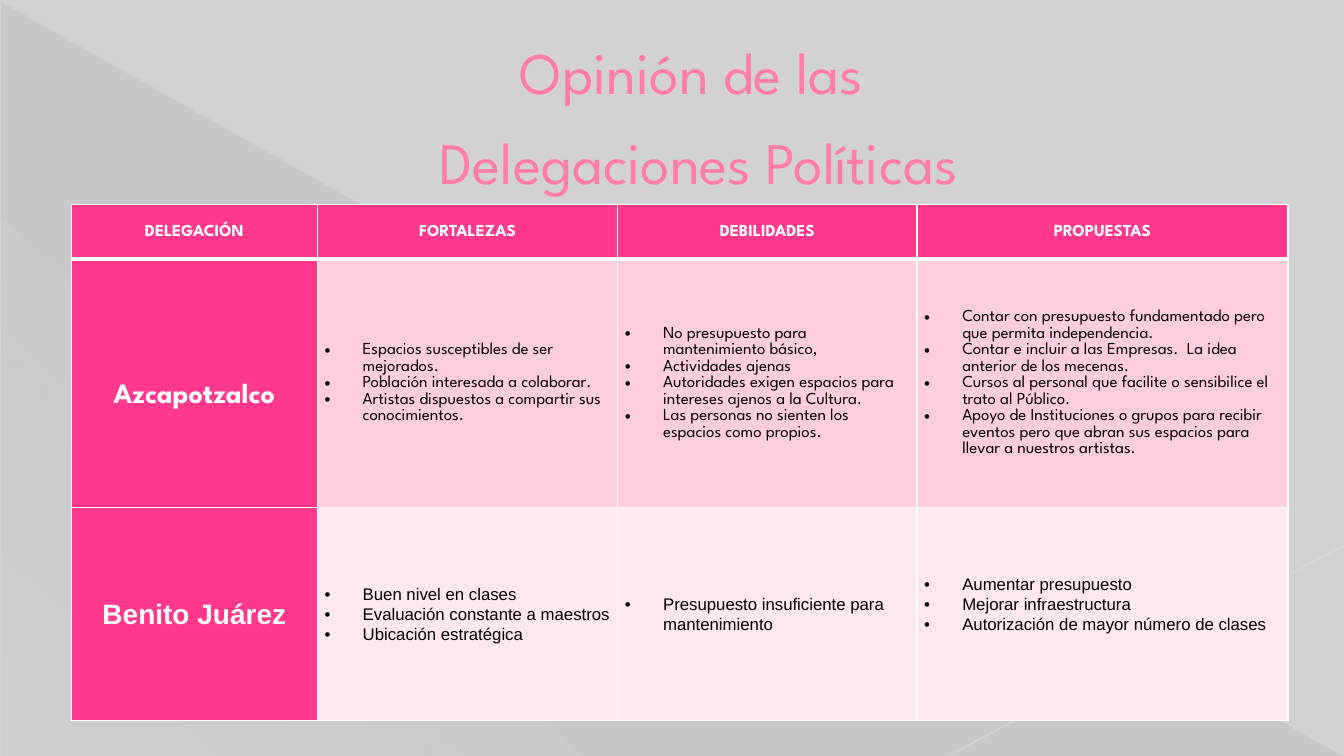
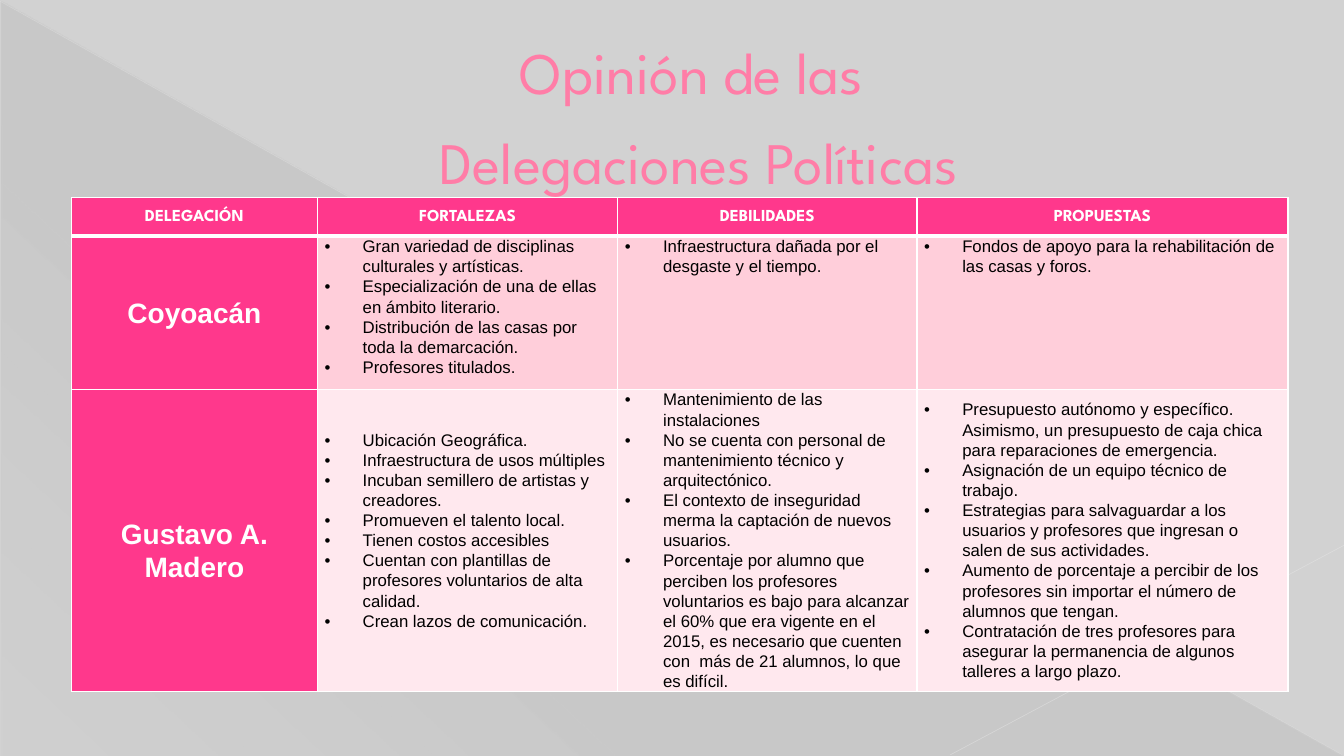
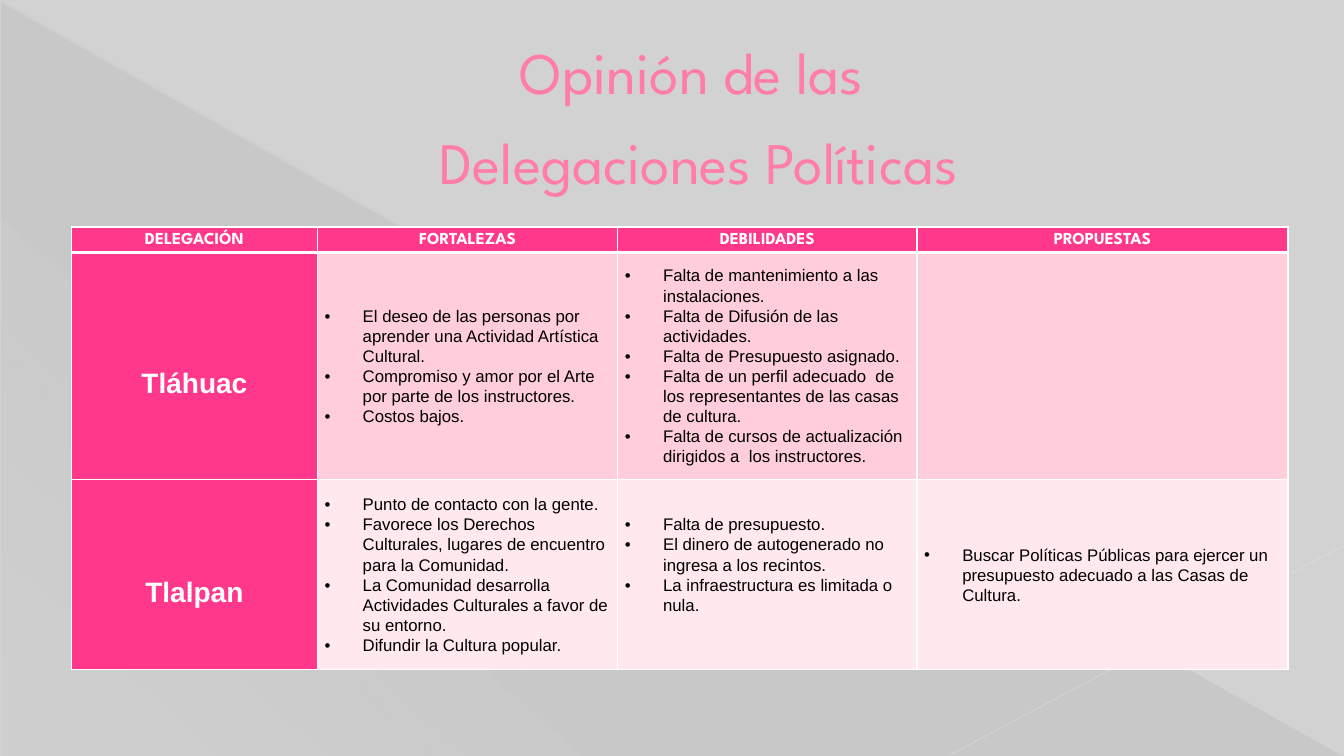
import copy

import lxml.etree
import pptx
import pptx.dml.color
import pptx.enum.shapes
import pptx.enum.text
import pptx.oxml.ns
import pptx.util

Cm = pptx.util.Cm
Pt = pptx.util.Pt
RGBColor = pptx.dml.color.RGBColor
Align = pptx.enum.text.PP_ALIGN
Anchor = pptx.enum.text.MSO_ANCHOR
qn = pptx.oxml.ns.qn

BACKGROUND = RGBColor(0xD2, 0xD2, 0xD2)
SHADE = RGBColor(0x66, 0x66, 0x66)
DIAGONAL = RGBColor(0xE8, 0xE8, 0xE8)
CORNER = RGBColor(0xEA, 0xEA, 0xEA)
TITLE_PINK = RGBColor(0xFF, 0x7D, 0xA7)
TITLE_EDGE = RGBColor(0xB1, 0x27, 0x61)
STRONG_PINK = RGBColor(0xFF, 0x38, 0x8C)
ROW_PINKS = (RGBColor(0xFF, 0xCE, 0xDA), RGBColor(0xFF, 0xE8, 0xEE))
WHITE = RGBColor(0xFF, 0xFF, 0xFF)
BLACK = RGBColor(0, 0, 0)

DISPLAY = "League Spartan"
PLAIN = "Arial"
TITLE = "Opinión de las \vDelegaciones Políticas"
HEADINGS = ("DELEGACIÓN", "FORTALEZAS", "DEBILIDADES", "PROPUESTAS")
COLUMNS = (6.2, 7.57, 7.54, 9.35)
LINE_GAP = 0.51


def add(parent, tag, **attributes):
    return lxml.etree.SubElement(parent, qn(tag), **attributes)


def add_color(parent, color, opacity=100):
    node = add(parent, "a:srgbClr", val=str(color))
    if opacity < 100:
        add(node, "a:alpha", val=str(opacity * 1000))


class Deck:
    def __init__(self):
        self.presentation = pptx.Presentation()
        self.presentation.slide_width = Cm(33.87)
        self.presentation.slide_height = Cm(19.05)
        self.layout = self.presentation.slide_layouts[5]
        self.slide = None
        background = self.presentation.slide_master.background.fill
        background.solid()
        background.fore_color.rgb = BACKGROUND
        heading, *footers = self.layout.placeholders
        heading.left, heading.top = Cm(1.7), Cm(0.74)
        heading.width, heading.height = Cm(30.48), Cm(3.89)
        for footer in footers:
            footer.element.getparent().remove(footer.element)

    def add_slide(self):
        first = self.slide is None
        self.slide = self.presentation.slides.add_slide(self.layout)
        if first:
            self.backdrop()
        self.title()

    def backdrop(self):
        triangle = self.slide.shapes.add_shape(
            pptx.enum.shapes.MSO_SHAPE.RIGHT_TRIANGLE, Cm(0.03), Cm(0.05), Cm(33.81), Cm(19))
        triangle.shadow.inherit = False
        triangle.line.fill.background()
        triangle.fill.gradient()
        triangle.fill.gradient_angle = 227
        stops = triangle.element.find(".//" + qn("a:gsLst"))
        for stop in list(stops):
            stops.remove(stop)
        for place, opacity in ((0, 10), (70, 8), (100, 1)):
            add_color(add(stops, "a:gs", pos=str(place * 1000)), SHADE, opacity)
        diagonal = self.line((0, 0.03), (33.83, 19.02), DIAGONAL, 0.39, 35)
        corner = self.line((33.87, 13.74), (23.95, 19.02), CORNER, 0.47, 45)
        for part in (triangle, diagonal, corner):
            self.layout.shapes.element.append(part.element)

    def line(self, start, end, color, width, opacity):
        line = self.slide.shapes.add_connector(
            pptx.enum.shapes.MSO_CONNECTOR.STRAIGHT, *map(Cm, start + end))
        line.line.width = Pt(width)
        line.line.color.rgb = color
        add(line.element.find(".//" + qn("a:srgbClr")), "a:alpha", val=str(opacity * 1000))
        add(line.element.spPr, "a:effectLst")
        return line

    def title(self):
        title = self.slide.shapes.title
        frame = title.text_frame
        frame.text = TITLE
        frame.word_wrap = True
        frame.vertical_anchor = Anchor.MIDDLE
        paragraph = frame.paragraphs[0]
        self.style(paragraph, DISPLAY, 42, TITLE_PINK, False, Align.CENTER, 1.27)
        title.element.find(".//" + qn("a:pPr")).set("marL", str(Cm(1.35)))
        for properties in title.element.findall(".//" + qn("a:rPr")):
            edge = lxml.etree.Element(qn("a:ln"), w=str(Pt(0.5)))
            add_color(add(edge, "a:solidFill"), TITLE_EDGE)
            properties.insert(0, edge)
        line_break = title.element.find(".//" + qn("a:br"))
        line_break.append(copy.deepcopy(properties))

    def style(self, paragraph, font, size, color, bold, align, spacing=1.07):
        paragraph.alignment = align
        paragraph.line_spacing = spacing
        for run in paragraph.runs:
            run.font.name = font
            run.font.size = Pt(size)
            run.font.bold = bold
            run.font.color.rgb = color

    def cell(self, cell, fill, top=1, bottom=1, anchor=Anchor.MIDDLE):
        properties = cell._tc.get_or_add_tcPr()
        for side, width in (("L", 1), ("R", 1), ("T", top), ("B", bottom)):
            border = add(properties, "a:ln" + side, w=str(Pt(width)))
            add_color(add(border, "a:solidFill"), WHITE)
        cell.fill.solid()
        cell.fill.fore_color.rgb = fill
        cell.margin_left = cell.margin_right = Cm(0.18)
        cell.margin_top = cell.margin_bottom = 0
        cell.vertical_anchor = anchor

    def label(self, cell, text, font, size):
        cell.text_frame.text = text
        self.style(cell.text_frame.paragraphs[0], font, size, WHITE, True, Align.CENTER)

    def bullets(self, cell, items, font):
        cell.text_frame.text = "\n".join(items)
        for paragraph in cell.text_frame.paragraphs:
            if items:
                self.style(paragraph, font, 12, BLACK, False, Align.LEFT)
                properties = paragraph._p.get_or_add_pPr()
                properties.set("marL", str(Cm(0.96)))
                properties.set("indent", str(-Cm(0.96)))
                add(properties, "a:buFont", typeface=PLAIN)
                add(properties, "a:buChar", char="•")

    def table(self, top, heights, boroughs):
        table = self.slide.shapes.add_table(
            len(heights), len(COLUMNS), Cm(1.8), Cm(top),
            Cm(sum(COLUMNS)), Cm(sum(heights))).table
        for column, width in zip(table.columns, COLUMNS):
            column.width = Cm(width)
        for row, height in zip(table.rows, heights):
            row.height = Cm(height)
        for column, heading in enumerate(HEADINGS):
            cell = table.cell(0, column)
            self.cell(cell, STRONG_PINK, bottom=3)
            self.label(cell, heading, DISPLAY, 12)
        for row, borough in enumerate(boroughs, 1):
            top_border = 3 if row == 1 else 1
            font = borough.get("font", PLAIN)
            name = table.cell(row, 0)
            self.cell(name, STRONG_PINK, top_border)
            name.margin_top = Cm(borough.get("drop", 0))
            self.label(name, borough["name"], font, 20)
            for column, items in enumerate(borough["opinions"], 1):
                cell = table.cell(row, column)
                self.cell(cell, ROW_PINKS[row - 1], top_border,
                          anchor=borough.get("anchor", Anchor.MIDDLE))
                if column == borough.get("raised"):
                    cell.margin_bottom = Cm(LINE_GAP)
                self.bullets(cell, items, font)


SLIDES = (
    (5.16, (1.37, 6.25, 5.38), (
        {"name": "Azcapotzalco", "font": DISPLAY, "drop": 0.66, "opinions": (
            ("Espacios susceptibles de ser mejorados.",
             "Población interesada a colaborar.",
             "Artistas dispuestos a compartir sus conocimientos."),
            ("No presupuesto para mantenimiento básico,",
             "Actividades ajenas",
             "Autoridades exigen espacios para intereses ajenos a la Cultura.",
             "Las personas no sienten los espacios como propios."),
            ("Contar con presupuesto fundamentado pero que permita independencia.",
             "Contar e incluir a las Empresas.  La idea anterior de los mecenas.",
             "Cursos al personal que facilite o sensibilice el trato al Público.",
             "Apoyo de Instituciones o grupos para recibir eventos pero que abran "
             "sus espacios para llevar a nuestros artistas."))},
        {"name": "Benito Juárez", "raised": 3, "opinions": (
            ("Buen nivel en clases",
             "Evaluación constante a maestros",
             "Ubicación estratégica"),
            ("Presupuesto insuficiente para mantenimiento",),
            ("Aumentar presupuesto",
             "Mejorar infraestructura",
             "Autorización de mayor número de clases"))})),
    (4.98, (0.97, 3.86, 7.47), (
        {"name": "Coyoacán", "anchor": Anchor.TOP, "opinions": (
            ("Gran variedad de disciplinas culturales y artísticas.",
             "Especialización de una de ellas en ámbito literario.",
             "Distribución de las casas por toda la demarcación.",
             "Profesores titulados."),
            ("Infraestructura dañada por el desgaste y el tiempo.",),
            ("Fondos de apoyo para la rehabilitación de las casas y foros.",))},
        {"name": "Gustavo A. Madero", "drop": LINE_GAP, "raised": 1, "opinions": (
            ("Ubicación Geográfica.",
             "Infraestructura de usos múltiples",
             "Incuban semillero de artistas y creadores.",
             "Promueven el talento local.",
             "Tienen costos accesibles",
             "Cuentan con plantillas de profesores voluntarios de alta calidad.",
             "Crean lazos de comunicación."),
            ("Mantenimiento de las instalaciones",
             "No se cuenta con personal de mantenimiento técnico y arquitectónico.",
             "El contexto de inseguridad merma la captación de nuevos usuarios.",
             "Porcentaje por alumno que perciben los profesores  voluntarios es bajo "
             "para alcanzar el 60% que era vigente en el 2015, es necesario que cuenten "
             "con  más de 21 alumnos, lo que es difícil."),
            ("Presupuesto autónomo y específico. Asimismo, un presupuesto de caja chica "
             "para reparaciones de emergencia.",
             "Asignación de un equipo técnico de trabajo.",
             "Estrategias para salvaguardar a los usuarios y profesores que ingresan o "
             "salen de sus actividades.",
             "Aumento de porcentaje a percibir de los profesores sin importar el número "
             "de alumnos que tengan.",
             "Contratación de tres profesores para asegurar la permanencia de algunos "
             "talleres a largo plazo."))})),
    (5.72, (0.64, 5.72, 4.8), (
        {"name": "Tláhuac", "drop": 0.84, "opinions": (
            ("El deseo de las personas por aprender una Actividad Artística Cultural.",
             "Compromiso y amor por el Arte por parte de los instructores.",
             "Costos bajos."),
            ("Falta de mantenimiento a las instalaciones.",
             "Falta de Difusión de las actividades.",
             "Falta de Presupuesto asignado.",
             "Falta de un perfil adecuado  de  los representantes de las casas de cultura.",
             "Falta de cursos de actualización dirigidos a  los instructores."),
            ())},
        {"name": "Tlalpan", "drop": 0.84, "raised": 2, "opinions": (
            ("Punto de contacto con la gente.",
             "Favorece los Derechos Culturales, lugares de encuentro para la Comunidad.",
             "La Comunidad desarrolla Actividades Culturales a favor de su entorno.",
             "Difundir la Cultura popular."),
            ("Falta de presupuesto.",
             "El dinero de autogenerado no ingresa a los recintos.",
             "La infraestructura es limitada o nula."),
            ("Buscar Políticas Públicas para ejercer un presupuesto adecuado a las "
             "Casas de Cultura.",))})),
)


def main():
    deck = Deck()
    for top, heights, boroughs in SLIDES:
        deck.add_slide()
        deck.table(top, heights, boroughs)
    deck.presentation.save("out.pptx")


if __name__ == "__main__":
    main()
